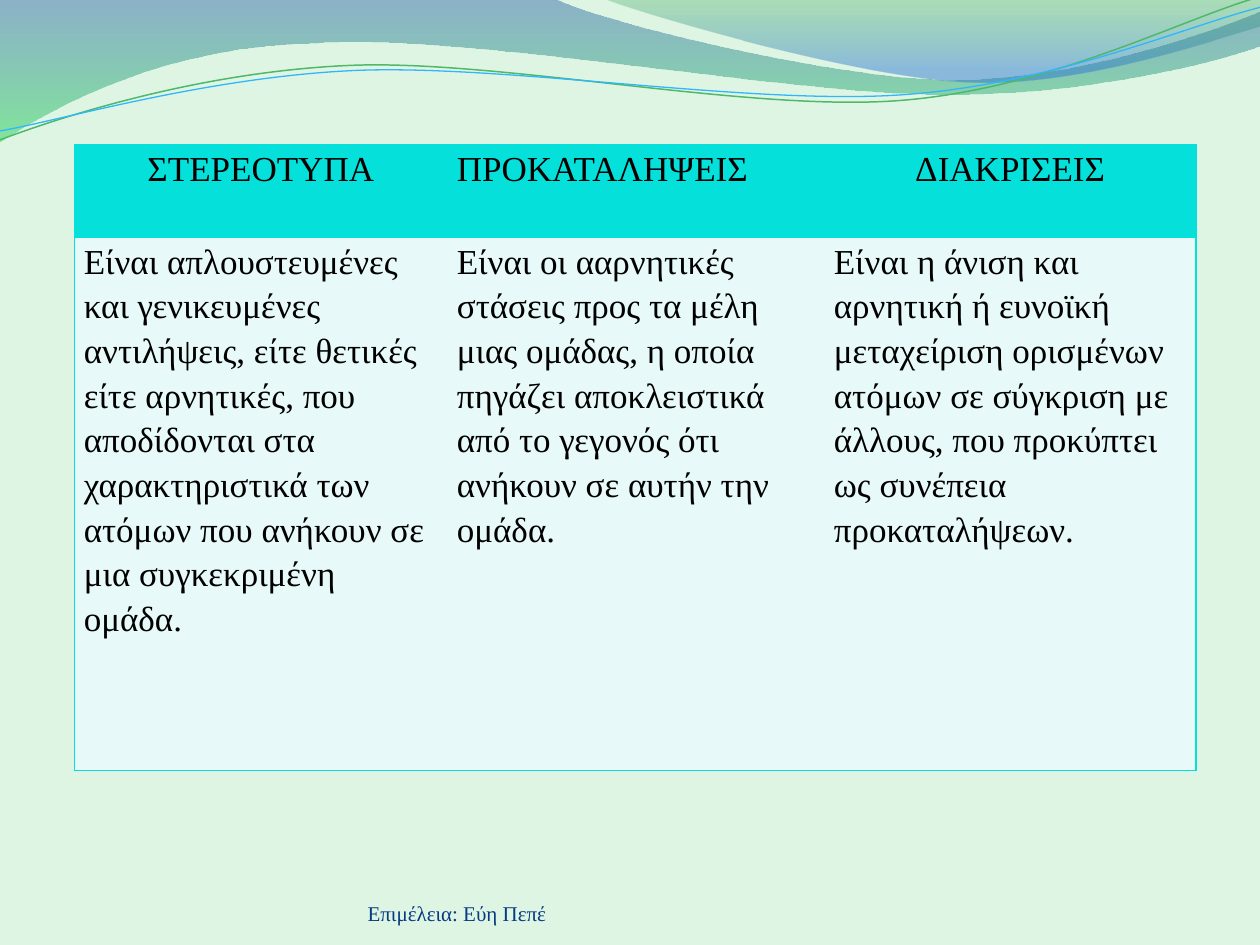
from dataclasses import dataclass
from typing import Optional

from lxml.etree import SubElement
from pptx import Presentation
from pptx.dml.color import RGBColor
from pptx.enum.text import MSO_ANCHOR, PP_ALIGN
from pptx.oxml.ns import qn
from pptx.util import Cm, Pt

COLORS = {
    "background": "DEF5E4",
    "header": "05E0DB",
    "body": "E7F9F8",
    "text": "000000",
    "credit": "073B81",
    "navy": "2960A7",
    "mint": "35DA5E",
    "leaf": "36A752",
    "azure": "2472D3",
    "green_line": "50B86A",
    "blue_line": "31B6FD",
}
FONT = "Times New Roman"
Point = tuple[float, float]


@dataclass(frozen=True)
class GradientStop:
    position: float
    color: str
    opacity: int


@dataclass(frozen=True)
class Wave:
    start: Point
    segments: tuple[tuple[Point, ...], ...]
    stops: tuple[GradientStop, ...] = ()
    line_color: Optional[str] = None
    line_width: float = 0


@dataclass(frozen=True)
class Column:
    width: float
    heading: str
    definition: str
    heading_alignment: PP_ALIGN


WAVES = (
    Wave(
        (0, 0),
        (
            ((11.18, -0.03),),
            ((12.09, 0.43), (16.87, 1.6), (19.25, 1.6)),
            ((21.67, 1.6), (24.33, 0.66), (25.4, 0.23)),
            ((25.43, 0.91),),
            ((24.97, 1.12), (22.1, 1.93), (18.95, 1.9)),
            ((15.8, 1.9), (9.7, 0.71), (6.53, 0.86)),
            ((3.28, 0.91), (1.17, 2.11), (-0.03, 2.87)),
            ((0, 0),),
        ),
        stops=(GradientStop(0, "navy", 45), GradientStop(1, "mint", 55)),
    ),
    Wave(
        (12.17, -0.03),
        (
            ((12.93, 0.28), (17.32, 1.57), (19.53, 1.65)),
            ((21.74, 1.75), (24.41, 0.81), (25.4, 0.53)),
            ((25.4, 0),),
            ((12.17, -0.03),),
        ),
        stops=(GradientStop(0, "leaf", 30), GradientStop(0.8, "azure", 45)),
    ),
    Wave(
        (0, 2.82),
        (
            ((1.22, 2.36), (4.01, 1.45), (7.04, 1.32)),
            ((10.03, 1.19), (15.06, 2.26), (18.11, 2.03)),
            ((21.16, 1.8), (23.83, 0.38), (25.35, -0.05)),
        ),
        line_color="green_line",
        line_width=0.85,
    ),
    Wave(
        (0, 2.64),
        (
            ((1.19, 2.44), (4.17, 1.55), (7.19, 1.42)),
            ((10.24, 1.3), (15.16, 2.13), (18.21, 1.91)),
            ((21.23, 1.7), (23.9, 0.53), (25.4, 0.15)),
        ),
        line_color="blue_line",
        line_width=0.75,
    ),
)

COLUMNS = (
    Column(
        7.52,
        "ΣΤΕΡΕΟΤΥΠΑ",
        "Είναι απλουστευμένες και γενικευμένες αντιλήψεις, είτε θετικές είτε "
        "αρνητικές, που αποδίδονται στα χαρακτηριστικά των ατόμων που ανήκουν "
        "σε μια συγκεκριμένη ομάδα.",
        PP_ALIGN.CENTER,
    ),
    Column(
        7.6,
        "ΠΡΟΚΑΤΑΛΗΨΕΙΣ",
        "Είναι οι ααρνητικές στάσεις προς τα μέλη μιας ομάδας, η οποία πηγάζει "
        "αποκλειστικά από το γεγονός ότι ανήκουν σε αυτήν την ομάδα.",
        PP_ALIGN.LEFT,
    ),
    Column(
        7.49,
        "ΔΙΑΚΡΙΣΕΙΣ",
        "Είναι η άνιση και αρνητική ή ευνοϊκή μεταχείριση ορισμένων ατόμων σε "
        "σύγκριση με άλλους, που προκύπτει ως συνέπεια προκαταλήψεων.",
        PP_ALIGN.CENTER,
    ),
)
ROW_HEIGHTS = (1.86, 10.75)


def rgb(name: str) -> RGBColor:
    return RGBColor.from_string(COLORS[name])


def set_attributes(target, values: dict) -> None:
    for name, value in values.items():
        setattr(target, name, value)


def bend_segments(shape, segments: tuple[tuple[Point, ...], ...]) -> None:
    lines = iter(list(shape.element.iter(qn("a:lnTo"))))
    for segment in segments:
        curve = next(lines)
        if len(segment) == 3:
            curve.tag = qn("a:cubicBezTo")
            for line in (next(lines), next(lines)):
                curve.append(line[0])
                line.getparent().remove(line)


def draw_wave(slide, wave: Wave) -> None:
    points = [wave.start] + [point for segment in wave.segments for point in segment]
    start, *others = [(Cm(x), Cm(y)) for x, y in points]
    builder = slide.shapes.build_freeform(*start)
    builder.add_line_segments(others, close=bool(wave.stops))
    shape = builder.convert_to_shape()
    bend_segments(shape, wave.segments)
    shape.shadow.inherit = False
    if not wave.stops:
        shape.fill.background()
        shape.line.color.rgb = rgb(wave.line_color)
        shape.line.width = Pt(wave.line_width)
        return
    shape.line.fill.background()
    shape.fill.gradient()
    shape.fill.gradient_angle = 270
    for target, stop in zip(shape.fill.gradient_stops, wave.stops):
        target.position = stop.position
        target.color.rgb = rgb(stop.color)
    for color, stop in zip(shape.element.iter(qn("a:srgbClr")), wave.stops):
        SubElement(color, qn("a:alpha"), val=str(stop.opacity * 1000))


def write_text(paragraph, text: str, size: float, color: str) -> None:
    run = paragraph.add_run()
    run.text = text
    set_attributes(run.font, {"name": FONT, "size": Pt(size), "bold": False})
    run.font.color.rgb = rgb(color)


def set_borders(cell, visible_sides: str) -> None:
    properties = cell._tc.get_or_add_tcPr()
    for side in "LRTB":
        border = SubElement(properties, qn(f"a:ln{side}"), w=str(Pt(1)))
        if side in visible_sides:
            fill = SubElement(border, qn("a:solidFill"))
            SubElement(fill, qn("a:srgbClr"), val=COLORS["header"])
        else:
            SubElement(border, qn("a:noFill"))


def fill_cell(cell, text: str, alignment: PP_ALIGN, fill: str, sides: str) -> None:
    set_attributes(cell, {
        "margin_left": Cm(0.19), "margin_right": Cm(0.19),
        "margin_top": 0, "margin_bottom": 0,
    })
    set_borders(cell, sides)
    cell.fill.solid()
    cell.fill.fore_color.rgb = rgb(fill)
    paragraph = cell.text_frame.paragraphs[0]
    set_attributes(paragraph, {
        "alignment": alignment, "line_spacing": 1.15, "space_after": Pt(10),
    })
    write_text(paragraph, text, 20, "text")


def draw_table(slide) -> None:
    width = sum(column.width for column in COLUMNS)
    table = slide.shapes.add_table(
        len(ROW_HEIGHTS), len(COLUMNS), Cm(1.5), Cm(2.92), Cm(width), Cm(sum(ROW_HEIGHTS))
    ).table
    set_attributes(table, {"first_row": False, "horz_banding": False})
    for row, height in zip(table.rows, ROW_HEIGHTS):
        row.height = Cm(height)
    for index, column in enumerate(COLUMNS):
        table.columns[index].width = Cm(column.width)
        sides = "TB" + {0: "L", len(COLUMNS) - 1: "R"}.get(index, "")
        fill_cell(table.cell(0, index), column.heading, column.heading_alignment, "header", sides)
        fill_cell(table.cell(1, index), column.definition, PP_ALIGN.LEFT, "body", sides)


def draw_credit(slide) -> None:
    frame = slide.shapes.add_textbox(Cm(7.41), Cm(17.65), Cm(9.32), Cm(1.02)).text_frame
    set_attributes(frame, {
        "word_wrap": True, "vertical_anchor": MSO_ANCHOR.BOTTOM,
        "margin_left": 0, "margin_right": 0, "margin_top": 0, "margin_bottom": 0,
    })
    write_text(frame.paragraphs[0], "Επιμέλεια: Εύη Πεπέ", 12, "credit")


def main() -> None:
    presentation = Presentation()
    set_attributes(presentation, {"slide_width": Cm(25.4), "slide_height": Cm(19.05)})
    slide = presentation.slides.add_slide(presentation.slide_layouts[6])
    slide.background.fill.solid()
    slide.background.fill.fore_color.rgb = rgb("background")
    for wave in WAVES:
        draw_wave(slide, wave)
    draw_credit(slide)
    draw_table(slide)
    presentation.save("out.pptx")


if __name__ == "__main__":
    main()
